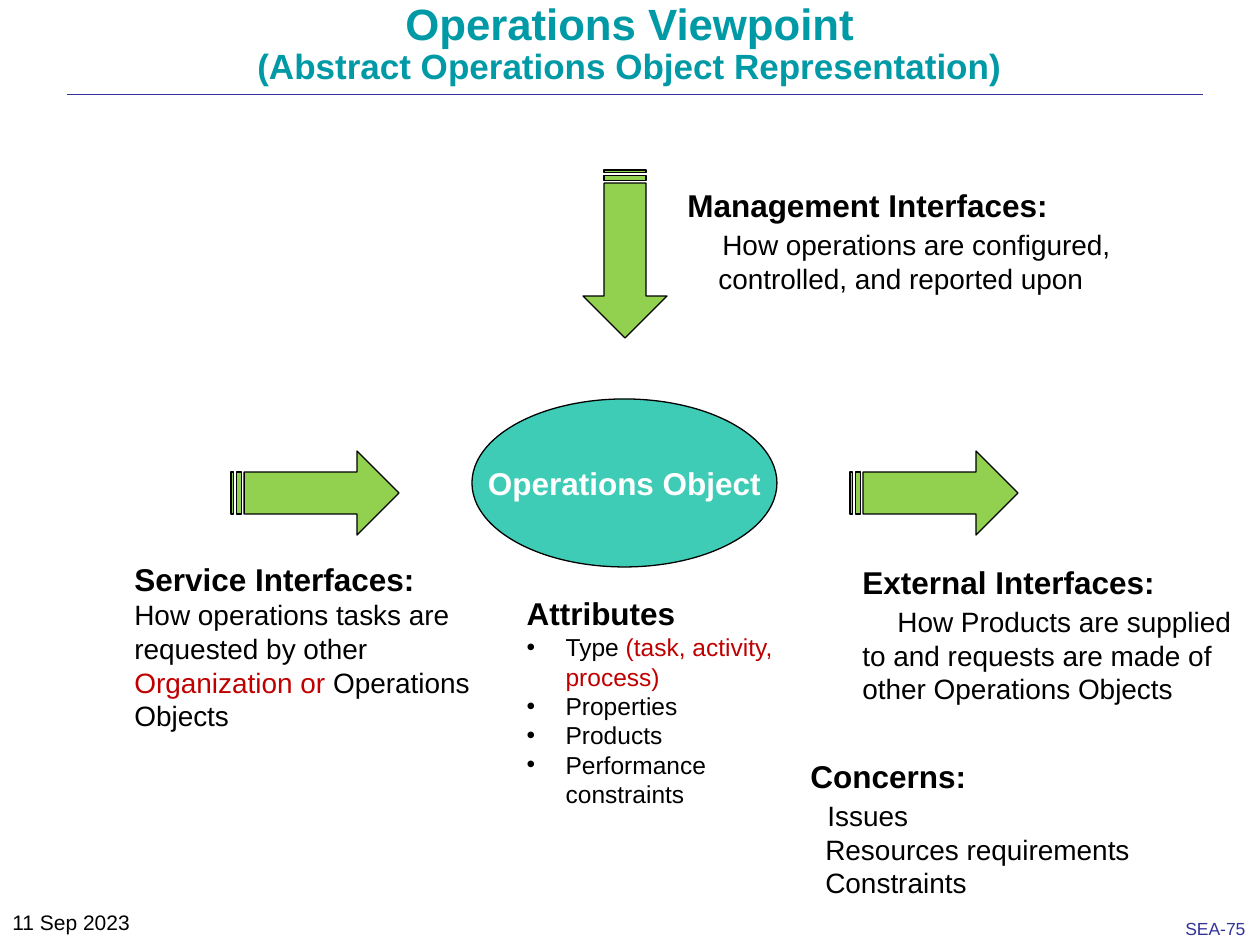
from dataclasses import dataclass

from lxml import etree
from pptx import Presentation
from pptx.dml.color import RGBColor
from pptx.enum import shapes, text
from pptx.oxml import ns
from pptx.util import Pt

PX = 914400 / 126  # EMU in one px


@dataclass(frozen=True)
class Theme:
    font: str = "Arial"
    black: str = "000000"
    white: str = "FFFFFF"
    title: str = "0099A6"
    navy: str = "333399"
    accent: str = "C00000"
    arrow: str = "92D050"
    core: str = "3FCCB6"
    title_size: int = 25
    subtitle_size: int = 20
    heading_size: int = 18
    body_size: int = 16
    list_size: int = 14
    date_size: int = 12
    number_size: int = 10


THEME = Theme()


def px(*lengths):
    return [round(length * PX) for length in lengths]


def set_format(target, **values):
    for name, value in values.items():
        setattr(target, name, value)


def line(*runs, size=THEME.body_size, color=THEME.black, bold=False,
         margin=0, indent=0, bullet=None, **spacing):
    """Describe one paragraph; a run is a string or a (string, color) pair."""
    return dict(runs=runs, size=size, color=color, bold=bold, margin=margin,
                indent=indent, bullet=bullet, spacing=spacing)


def heading(words):
    return line(words, size=THEME.heading_size, bold=True)


def write(frame, lines, **frame_values):
    set_format(frame, **{"word_wrap": True, "auto_size": text.MSO_AUTO_SIZE.NONE,
                         "vertical_anchor": text.MSO_ANCHOR.TOP, **frame_values})
    for number, item in enumerate(lines):
        para = frame.add_paragraph() if number else frame.paragraphs[0]
        set_format(para, **{"alignment": text.PP_ALIGN.LEFT, "line_spacing": 1.0,
                            "space_before": Pt(0), **item["spacing"]})
        # Indents and bullet
        props = para._p.get_or_add_pPr()
        margin, indent = px(item["margin"], item["indent"])
        props.set("marL", str(margin))
        props.set("indent", str(indent))
        if item["bullet"]:
            etree.SubElement(props, ns.qn("a:buChar"), char=item["bullet"])
        else:
            etree.SubElement(props, ns.qn("a:buNone"))
        for part in item["runs"]:
            words, color = part if isinstance(part, tuple) else (part, item["color"])
            run = para.add_run()
            run.text = words
            set_format(run.font, name=THEME.font, size=Pt(item["size"]), bold=item["bold"])
            run.font.color.rgb = RGBColor.from_string(color)


def add_text(slide, box, lines):
    write(slide.shapes.add_textbox(*px(*box)).text_frame, lines)


def fill_placeholder(holder, box, lines):
    set_format(holder, **dict(zip(("left", "top", "width", "height"), px(*box))))
    write(holder.text_frame, lines)


def add_outlined(slide, kind, box, fill, rotation=0):
    shape = slide.shapes.add_shape(kind, *px(*box))
    shape.rotation = rotation
    shape.shadow.inherit = False
    shape.fill.solid()
    shape.fill.fore_color.rgb = RGBColor.from_string(fill)
    shape.line.color.rgb = RGBColor.from_string(THEME.black)
    shape.line.width = Pt(0.75)
    return shape


def add_rule(slide, left, right, y):
    rule = slide.shapes.add_connector(shapes.MSO_CONNECTOR.STRAIGHT, *px(left, y, right, y))
    rule.line.color.rgb = RGBColor.from_string(THEME.navy)
    rule.line.width = Pt(0.13)
    etree.SubElement(rule._element.spPr, ns.qn("a:effectLst"))


def main():
    deck = Presentation()
    deck.slide_width, deck.slide_height = px(1260, 945)
    slide = deck.slides.add_slide(deck.slide_layouts[1])
    title, attributes = slide.placeholders

    # Title and rule below it
    centred = dict(color=THEME.title, bold=True, line_spacing=0.9,
                   alignment=text.PP_ALIGN.CENTER)
    fill_placeholder(title, (162, -4, 935, 60), [
        line("Operations Viewpoint", size=THEME.title_size, **centred),
        line("(Abstract Operations Object Representation)",
             size=THEME.subtitle_size, **centred)])
    add_rule(slide, 67, 1203, 94)

    # Footer
    add_text(slide, (0, 903, 262, 42), [line("11 Sep 2023", size=THEME.date_size)])
    add_text(slide, (1173, 912, 86, 33),
             [line("SEA-75", size=THEME.number_size, color=THEME.navy)])

    # Central object
    core = add_outlined(slide, shapes.MSO_SHAPE.OVAL, (472, 399, 305, 168), THEME.core)
    write(core.text_frame,
          [line("Operations Object", size=THEME.heading_size, color=THEME.white,
                bold=True, alignment=text.PP_ALIGN.CENTER)],
          word_wrap=False, vertical_anchor=text.MSO_ANCHOR.MIDDLE)

    # Attribute list
    bullets = [("Type ", ("(task, activity, process)", THEME.accent)),
               ("Properties",), ("Products",), ("Performance constraints",)]
    fill_placeholder(attributes, (514, 588, 305, 229), [heading("Attributes")] + [
        line(*runs, size=THEME.list_size, margin=39, indent=-39, bullet="•")
        for runs in bullets])

    # Interfaces and concerns
    lead = dict(space_before=Pt(2))
    add_text(slide, (675, 180, 454, 123), [
        heading("Management Interfaces:"),
        line("How operations are configured,", margin=35, **lead),
        line("controlled, and reported upon", margin=31)])
    add_text(slide, (122, 554, 372, 186), [
        heading("Service Interfaces:"),
        line("How operations tasks are requested by other ",
             ("Organization or ", THEME.accent), "Operations Objects")])
    add_text(slide, (850, 557, 398, 158), [
        heading("External Interfaces:"),
        line("How Products are supplied to and requests are made of "
             "other Operations Objects", indent=35, **lead)])
    add_text(slide, (798, 751, 416, 165), [
        heading("Concerns:"),
        line("Issues", margin=17, **lead),
        line("Resources requirements", margin=15),
        line("Constraints", margin=15)])

    # Arrows: management, service, external
    for left, top, rotation in ((541, 212, 90), (231, 451, 0), (850, 451, 0)):
        add_outlined(slide, shapes.MSO_SHAPE.STRIPED_RIGHT_ARROW,
                     (left, top, 168, 84), THEME.arrow, rotation)

    deck.save("out.pptx")


if __name__ == "__main__":
    main()
